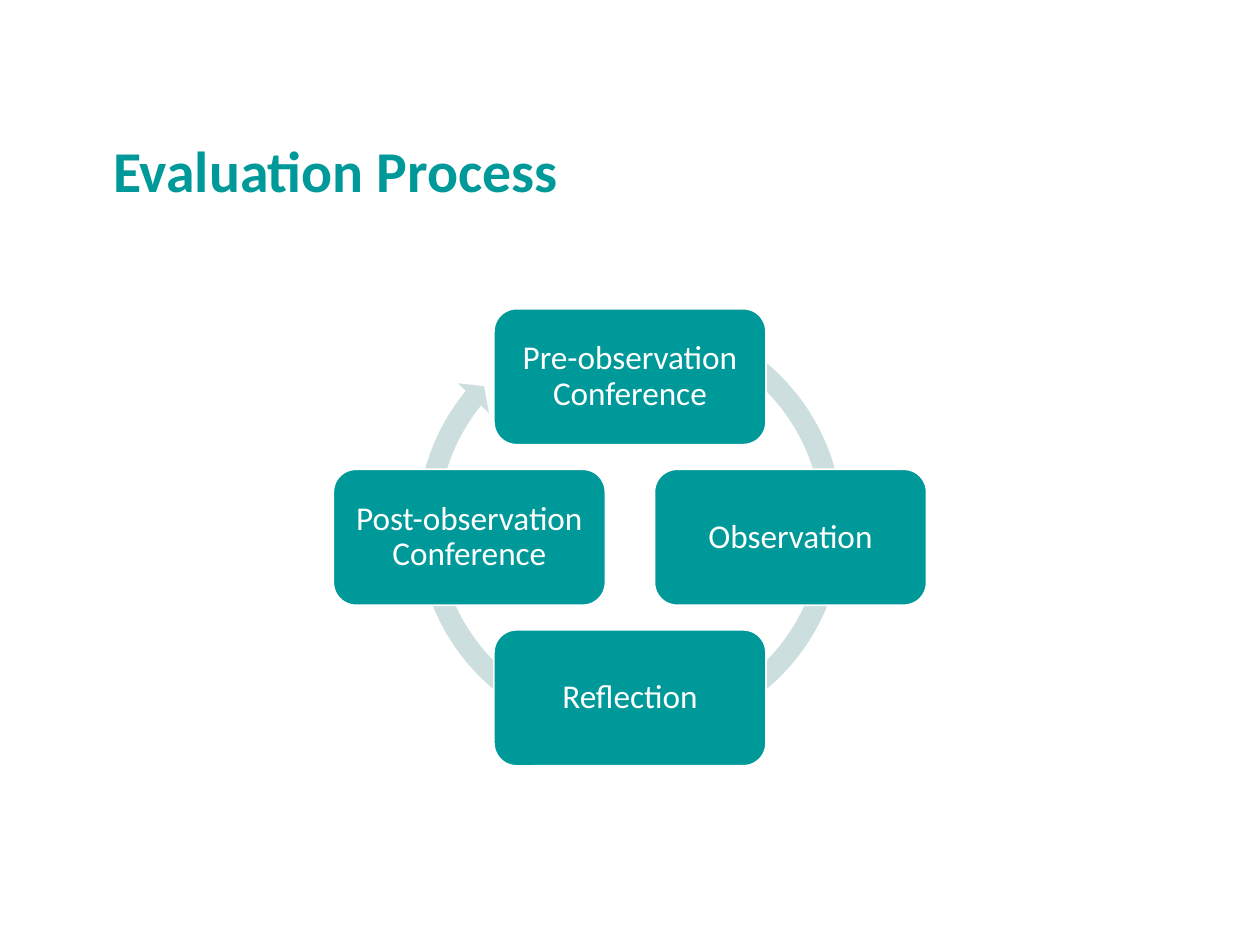
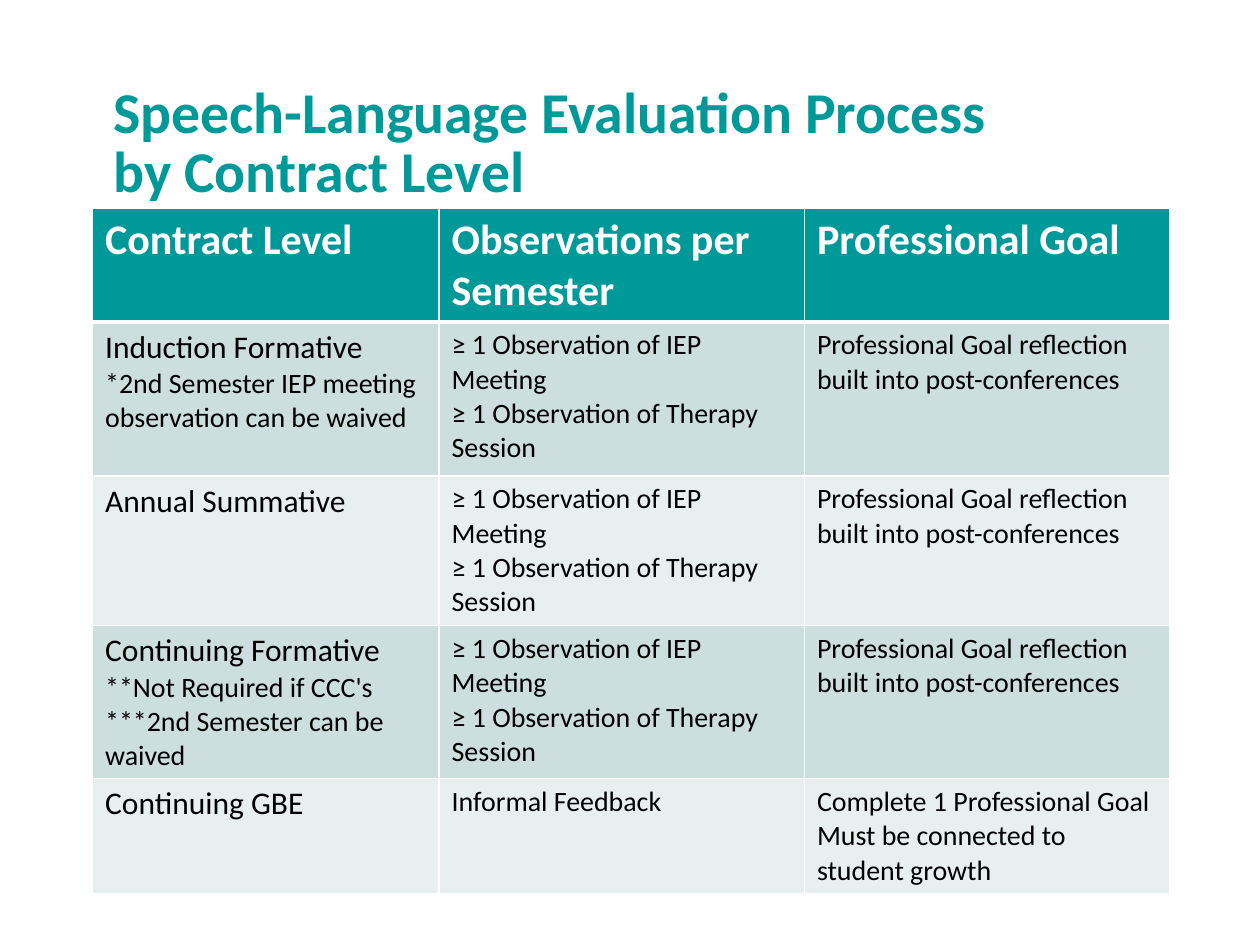
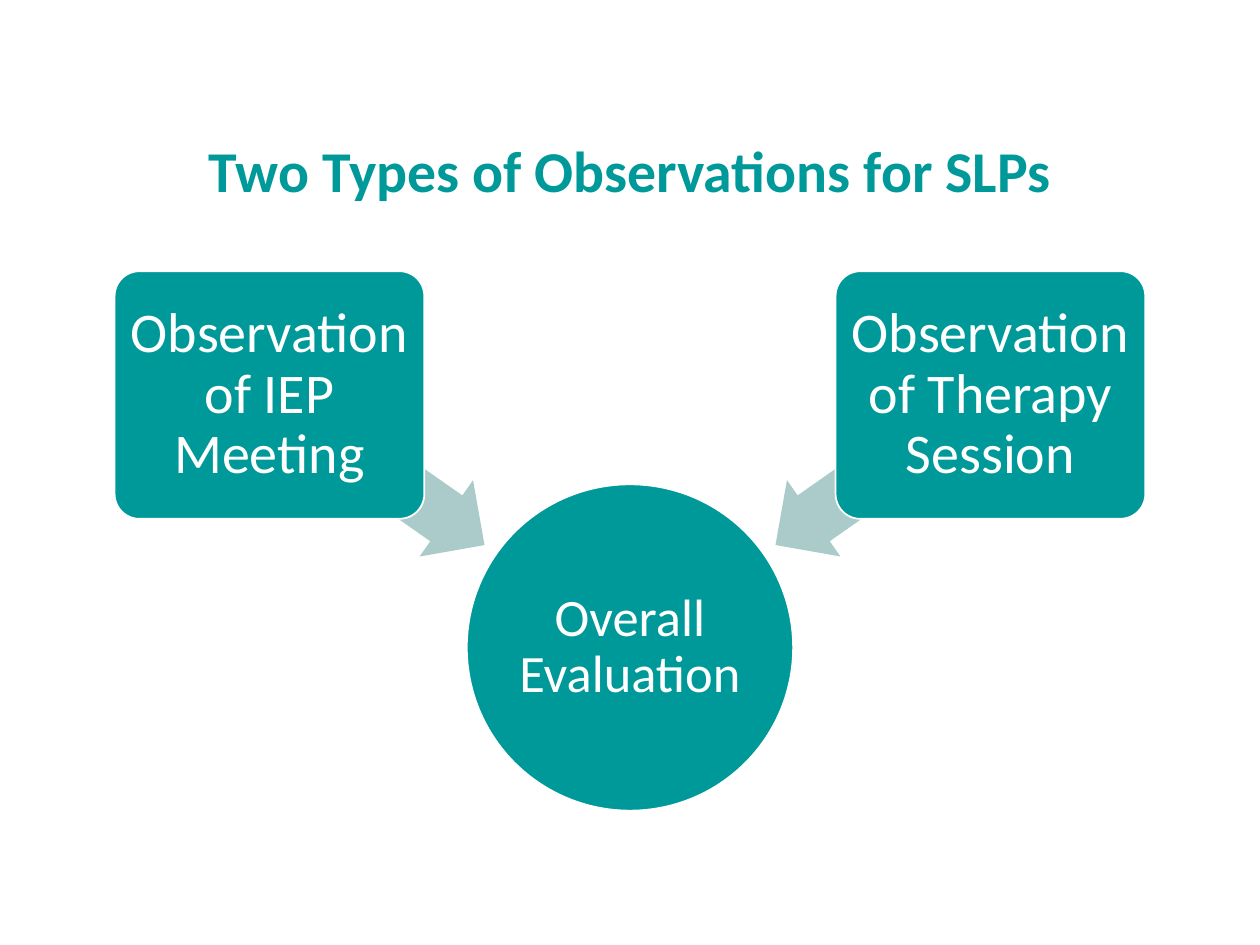
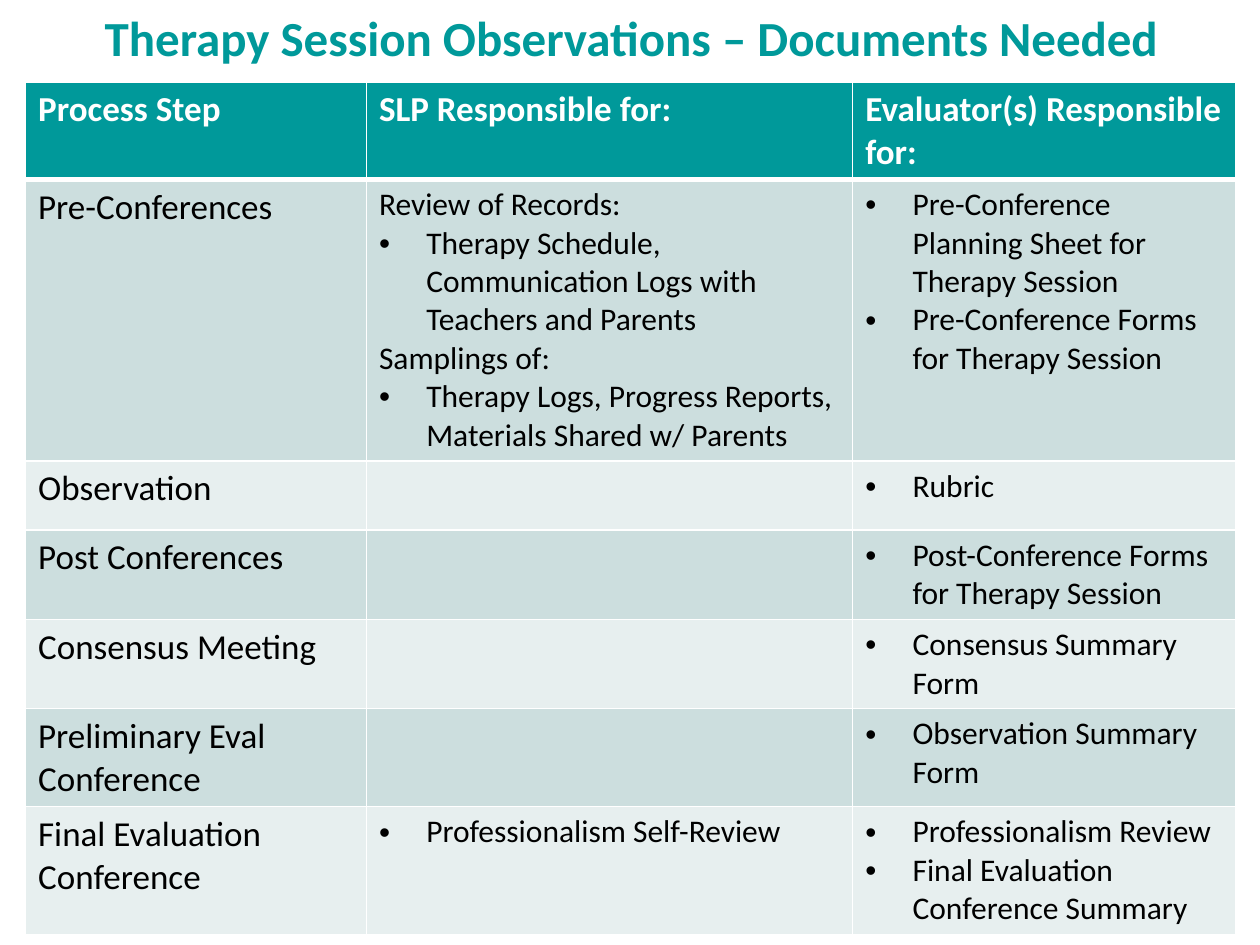
from math import cos, pi, sin

from lxml.etree import SubElement
from pptx import Presentation
from pptx.dml.color import RGBColor
from pptx.enum.shapes import MSO_SHAPE
from pptx.enum.text import MSO_ANCHOR, PP_ALIGN
from pptx.oxml.ns import qn
from pptx.util import Pt

TEAL = RGBColor(0x00, 0x99, 0x9A)
WHITE = RGBColor(0xFF, 0xFF, 0xFF)
BLACK = RGBColor(0x00, 0x00, 0x00)
MIST = RGBColor(0xCC, 0xDE, 0xDE)
PALE = RGBColor(0xE7, 0xEF, 0xEF)
ARROW = RGBColor(0xAB, 0xCA, 0xCA)
FONT = "Calibri"
BULLET = "• "
INDENT = Pt(27)
CENTER_X = 360

OBSERVATIONS = [
    "≥ 1 Observation of IEP Meeting",
    "≥ 1 Observation of Therapy Session",
]
REFLECTION = ["Professional Goal reflection built into post-conferences"]
CONTRACT_LEVELS = [
    [["Contract Level"], ["Observations per Semester"], ["Professional Goal"]],
    [["Induction Formative",
      "*2nd Semester IEP meeting observation can be waived"],
     OBSERVATIONS, REFLECTION],
    [["Annual Summative"], OBSERVATIONS, REFLECTION],
    [["Continuing Formative", "**Not Required if CCC's",
      "***2nd Semester can be waived"],
     OBSERVATIONS, REFLECTION],
    [["Continuing GBE"], ["Informal Feedback"],
     ["Complete 1 Professional Goal", "Must be connected to student growth"]],
]
DOCUMENTS = [
    [["Process Step"], ["SLP Responsible for:"],
     ["Evaluator(s) Responsible for:"]],
    [["Pre-Conferences"],
     ["Review of Records:",
      "• Therapy Schedule, Communication Logs with Teachers and Parents",
      "Samplings of:",
      "• Therapy Logs, Progress Reports, Materials Shared w/ Parents"],
     ["• Pre-Conference Planning Sheet for Therapy Session",
      "• Pre-Conference Forms for Therapy Session"]],
    [["Observation"], [], ["• Rubric"]],
    [["Post Conferences"], [],
     ["• Post-Conference Forms for Therapy Session"]],
    [["Consensus Meeting"], [], ["• Consensus Summary Form"]],
    [["Preliminary Eval Conference"], [], ["• Observation Summary Form"]],
    [["Final Evaluation Conference"], ["• Professionalism Self-Review"],
     ["• Professionalism Review", "• Final Evaluation Conference Summary"]],
]


def add_bullet(paragraph):
    properties = paragraph._p.get_or_add_pPr()
    properties.set("marL", str(INDENT))
    properties.set("indent", str(-INDENT))
    SubElement(properties, qn("a:buFont")).set("typeface", "Arial")
    SubElement(properties, qn("a:buChar")).set("char", BULLET.strip())


def write_text(frame, lines, size, color, lead_size=None, bold=False,
               align=PP_ALIGN.LEFT, spacing=None):
    for index, line in enumerate(lines):
        paragraph = frame.add_paragraph() if index else frame.paragraphs[0]
        paragraph.alignment = align
        if spacing:
            paragraph.line_spacing = spacing
        if line.startswith(BULLET):
            add_bullet(paragraph)
        paragraph.text = line.removeprefix(BULLET)
        for run in paragraph.runs:
            run.font.name = FONT
            run.font.size = Pt(lead_size if lead_size and index == 0 else size)
            run.font.bold = bold
            run.font.color.rgb = color


def set_frame(frame, anchor, inset):
    frame.word_wrap = True
    frame.vertical_anchor = anchor
    frame.margin_left = frame.margin_right = Pt(inset)
    frame.margin_top = frame.margin_bottom = Pt(inset)


def add_title(slide, title, box=(64.8, 15.84, 590.4, 100.8), size=33,
              align=PP_ALIGN.LEFT):
    frame = slide.shapes.add_textbox(*map(Pt, box)).text_frame
    set_frame(frame, MSO_ANCHOR.BOTTOM, 0)
    write_text(frame, [title], size, TEAL, bold=True, align=align, spacing=0.85)


def add_figure(slide, kind, center, size, fill, adjustments=(), rotation=0):
    (x, y), (width, height) = center, size
    figure = slide.shapes.add_shape(
        kind, Pt(x - width / 2), Pt(y - height / 2), Pt(width), Pt(height))
    figure.shadow.inherit = False
    figure.fill.solid()
    figure.fill.fore_color.rgb = fill
    figure.line.fill.background()
    figure.rotation = rotation
    for index, value in enumerate(adjustments):
        figure.adjustments[index] = value
    return figure


def add_node(slide, kind, label, center, size, font_size, inset, adjustments=()):
    node = add_figure(slide, kind, center, size, TEAL, adjustments)
    node.line.color.rgb = WHITE
    node.line.width = Pt(1)
    set_frame(node.text_frame, MSO_ANCHOR.MIDDLE, inset)
    write_text(node.text_frame, [label], font_size, WHITE,
               align=PP_ALIGN.CENTER, spacing=0.9)


def add_border(cell, side, width):
    border = SubElement(cell._tc.get_or_add_tcPr(), qn(f"a:ln{side}"))
    border.set("w", str(Pt(width)))
    fill = SubElement(border, qn("a:solidFill"))
    SubElement(fill, qn("a:srgbClr")).set("val", str(WHITE))


def add_grid(slide, rows, origin, widths, heights, header_size, lead_size,
             body_size):
    left, top = origin
    table = slide.shapes.add_table(
        len(rows), len(widths), Pt(left), Pt(top),
        Pt(sum(widths)), Pt(sum(heights))).table
    for column, width in zip(table.columns, widths):
        column.width = Pt(width)
    for row_index, (entries, height) in enumerate(zip(rows, heights)):
        table.rows[row_index].height = Pt(height)
        header = row_index == 0
        for column_index, lines in enumerate(entries):
            cell = table.cell(row_index, column_index)
            for side in "LRTB":
                under_header = (side, row_index) in (("B", 0), ("T", 1))
                add_border(cell, side, 3 if under_header else 1)
            cell.fill.solid()
            if header:
                cell.fill.fore_color.rgb = TEAL
                write_text(cell.text_frame, lines, header_size, WHITE, bold=True)
            else:
                cell.fill.fore_color.rgb = MIST if row_index % 2 else PALE
                write_text(cell.text_frame, lines, body_size, BLACK,
                           lead_size=None if column_index else lead_size)


def build_cycle(slide):
    add_title(slide, "Evaluation Process")
    add_figure(slide, MSO_SHAPE.CIRCULAR_ARROW, (CENTER_X, 300.6), (255.6, 255.6),
               MIST, (0.047, 2.729, 131.541, 178.149, 0.048))
    steps = ["Pre-observation Conference", "Observation", "Reflection",
             "Post-observation Conference"]
    radius = 91.75
    for index, step in enumerate(steps):
        angle = 2 * pi * index / len(steps)
        center = (CENTER_X + radius * sin(angle), 307 - radius * cos(angle))
        add_node(slide, MSO_SHAPE.ROUNDED_RECTANGLE, step, center,
                 (155.5, 77.75), 19, 5.5)


def build_contract_levels(slide):
    add_title(slide, "Speech-Language Evaluation Process\vby Contract Level")
    add_grid(slide, CONTRACT_LEVELS, (52.9, 119), (198, 208.8, 208.8),
             (65, 88, 85.5, 87.5, 65.5), 24, 18, 16)


def build_observation_types(slide):
    add_title(slide, "Two Types of Observations for SLPs", align=PP_ALIGN.CENTER)
    add_node(slide, MSO_SHAPE.OVAL, "Overall Evaluation", (CENTER_X, 370),
             (186.5, 186.5), 30, 1.4)
    for side, observation in ((-1, "Observation of IEP Meeting"),
                              (1, "Observation of Therapy Session")):
        add_figure(slide, MSO_SHAPE.LEFT_ARROW, (CENTER_X + 144.5 * side, 268.5),
                   (149.8, 53.3), ARROW, (0.6, 0.5), 270 + 55 * side)
        add_node(slide, MSO_SHAPE.ROUNDED_RECTANGLE, observation,
                 (CENTER_X + 206 * side, 225.75), (177, 141.5), 32, 4.5, (0.1,))


def build_documents(slide):
    add_title(slide, "Therapy Session Observations – Documents Needed",
              (59.8, 0, 620.6, 38.2), 28)
    add_grid(slide, DOCUMENTS, (14.6, 47), (194.8, 277.9, 218.9),
             (55.5, 161, 39.5, 51, 51, 56, 73), 20, 20, 18)


def main():
    deck = Presentation()
    deck.slide_width, deck.slide_height = Pt(720), Pt(540)
    for build in (build_cycle, build_contract_levels, build_observation_types,
                  build_documents):
        build(deck.slides.add_slide(deck.slide_layouts[6]))
    deck.save("out.pptx")


if __name__ == "__main__":
    main()
